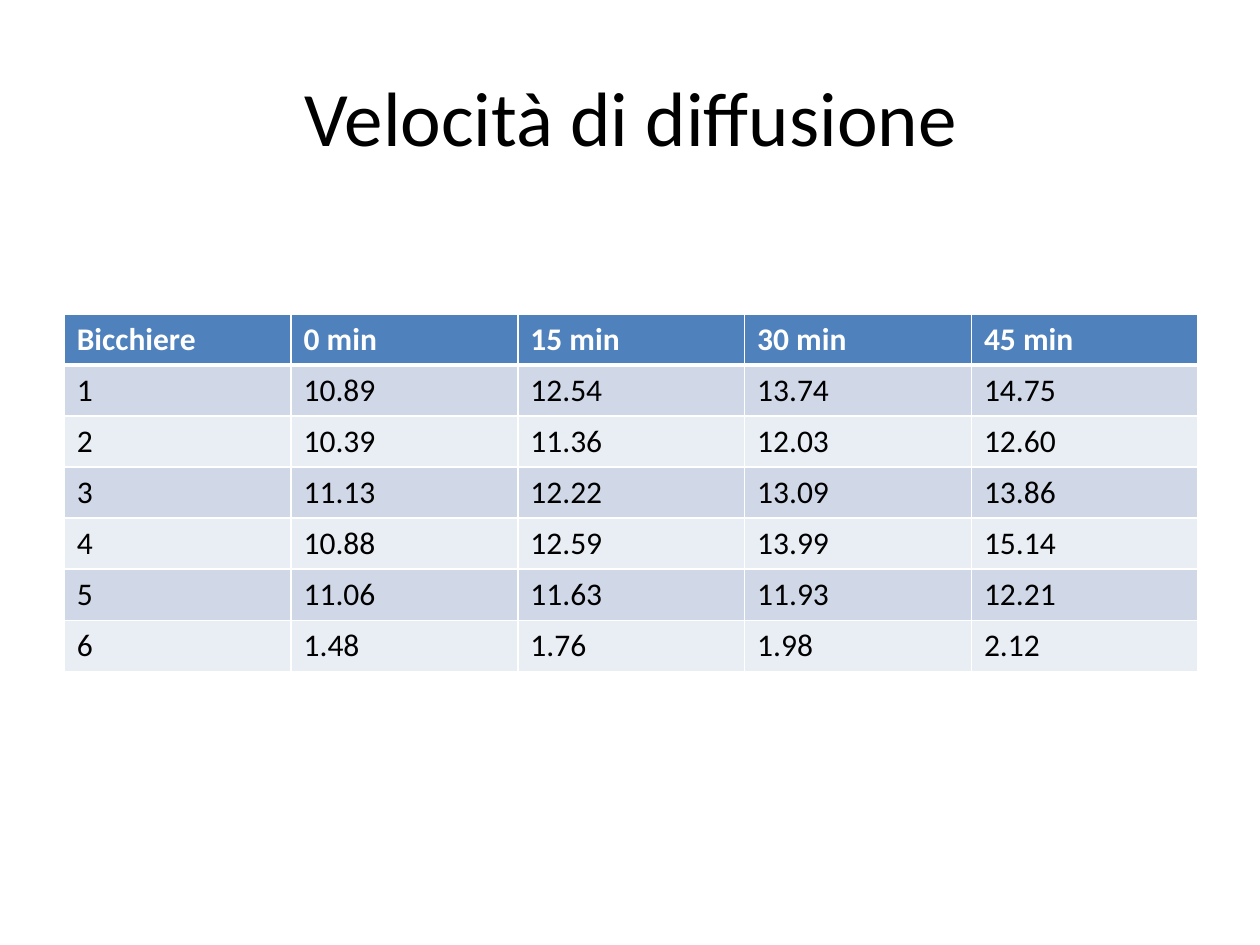
import lxml.etree
import pptx
import pptx.dml.color
import pptx.enum.text
import pptx.oxml.ns
import pptx.util
from pptx.util import Inches

BLACK = pptx.dml.color.RGBColor(0x00, 0x00, 0x00)
WHITE = pptx.dml.color.RGBColor(0xFF, 0xFF, 0xFF)
HEADER_BLUE = pptx.dml.color.RGBColor(0x4F, 0x81, 0xBD)
BAND_DARK = pptx.dml.color.RGBColor(0xD0, 0xD8, 0xE8)
BAND_LIGHT = pptx.dml.color.RGBColor(0xE9, 0xED, 0xF4)

MEASUREMENTS = [
    ["Bicchiere", "0 min", "15 min", "30 min", "45 min"],
    ["1", "10.89", "12.54", "13.74", "14.75"],
    ["2", "10.39", "11.36", "12.03", "12.60"],
    ["3", "11.13", "12.22", "13.09", "13.86"],
    ["4", "10.88", "12.59", "13.99", "15.14"],
    ["5", "11.06", "11.63", "11.93", "12.21"],
    ["6", "1.48", "1.76", "1.98", "2.12"],
]


def set_font(para, size, color, bold=False):
    para.font.name = "Calibri"
    para.font.size = pptx.util.Pt(size)
    para.font.color.rgb = color
    para.font.bold = bold


def add_border(cell, side, points):
    qn = pptx.oxml.ns.qn
    properties = cell._tc.get_or_add_tcPr()
    line = lxml.etree.SubElement(properties, qn("a:ln" + side), w=str(pptx.util.Pt(points)))
    fill = lxml.etree.SubElement(line, qn("a:solidFill"))
    lxml.etree.SubElement(fill, qn("a:srgbClr"), val=str(WHITE))


deck = pptx.Presentation()
deck.slide_width = Inches(10)
deck.slide_height = Inches(7.5)
page = deck.slides.add_slide(deck.slide_layouts[6])

title_box = page.shapes.add_textbox(Inches(0.51), Inches(0.29), Inches(9), Inches(1.25))
title_frame = title_box.text_frame
title_frame.word_wrap = True
title_frame.vertical_anchor = pptx.enum.text.MSO_ANCHOR.MIDDLE
title_para = title_frame.paragraphs[0]
title_para.text = "Velocità di diffusione"
title_para.alignment = pptx.enum.text.PP_ALIGN.CENTER
set_font(title_para, 44, BLACK)

table = page.shapes.add_table(
    len(MEASUREMENTS), len(MEASUREMENTS[0]),
    Inches(0.51), Inches(2.49), Inches(9), Inches(2.84),
).table

for row, values in enumerate(MEASUREMENTS):
    is_header = row == 0
    if is_header:
        row_color = HEADER_BLUE
    else:
        row_color = BAND_DARK if row % 2 else BAND_LIGHT
    for column, value in enumerate(values):
        cell = table.cell(row, column)
        add_border(cell, "L", 1)
        add_border(cell, "R", 1)
        add_border(cell, "T", 3 if row == 1 else 1)
        add_border(cell, "B", 3 if is_header else 1)
        cell.fill.solid()
        cell.fill.fore_color.rgb = row_color
        para = cell.text_frame.paragraphs[0]
        para.text = value
        set_font(para, 18, WHITE if is_header else BLACK, is_header)

deck.save("out.pptx")
